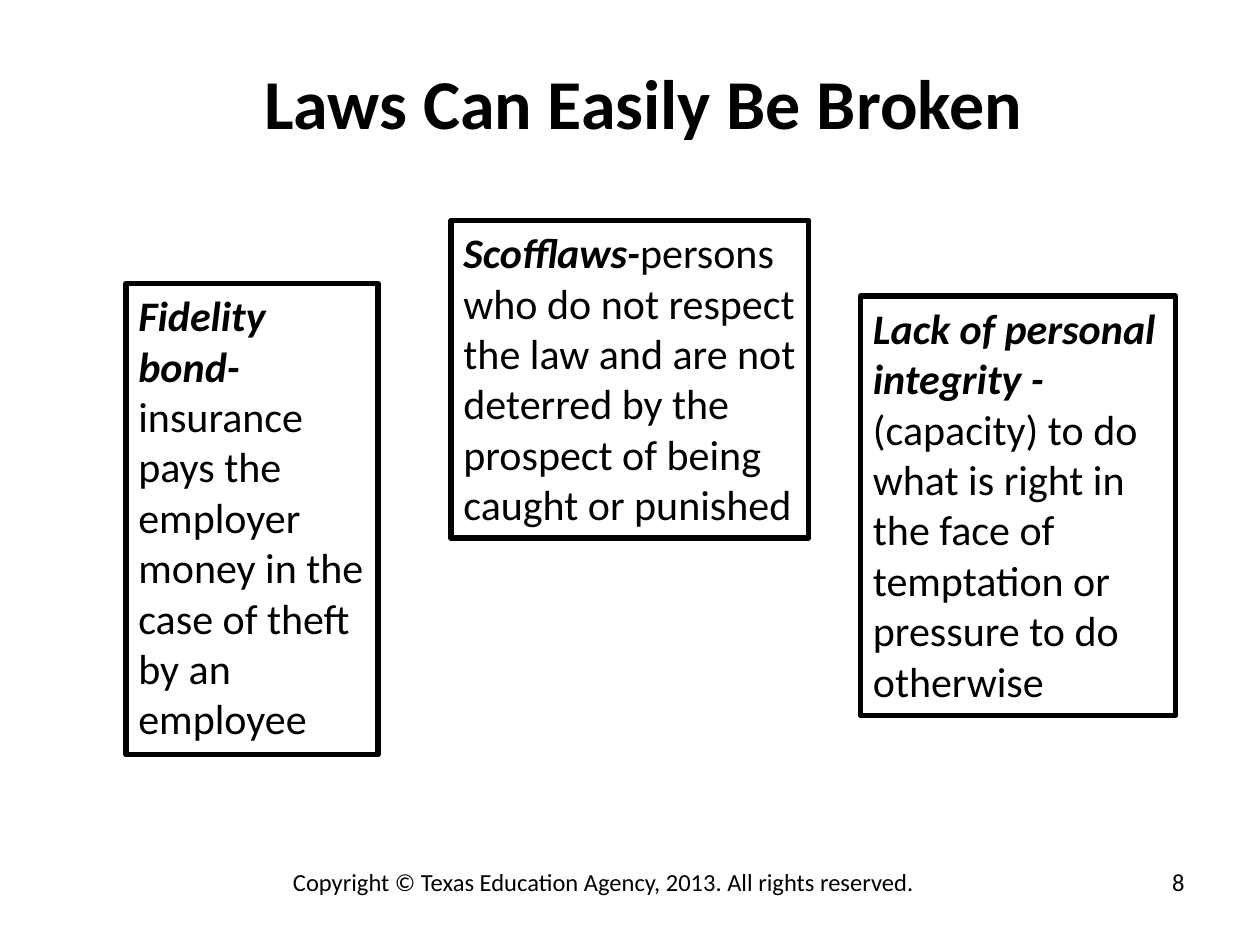
from dataclasses import dataclass

from pptx import Presentation
from pptx.dml.color import RGBColor
from pptx.enum.shapes import MSO_SHAPE
from pptx.enum.text import MSO_ANCHOR, PP_ALIGN
from pptx.slide import Slide
from pptx.text.text import TextFrame
from pptx.util import Inches, Pt

BLACK = RGBColor(0x00, 0x00, 0x00)
FONT = "Calibri"
RIGHT_INSET = Inches(0.08)  # keeps the longest definition lines whole


@dataclass(frozen=True)
class Label:
    text: str
    left: float
    top: float
    width: float
    height: float
    size: int
    align: PP_ALIGN = PP_ALIGN.LEFT
    bold: bool = False


@dataclass(frozen=True)
class TermBox:
    term: str
    definition: str
    left: float
    top: float
    width: float
    height: float


LABELS = [
    Label("Laws Can Easily Be Broken", 2, 0.42, 8, 0.77, 40, bold=True),
    Label("8", 7.17, 6.83, 2.33, 0.52, 14, PP_ALIGN.RIGHT),
    Label("Copyright © Texas Education Agency, 2013. All rights reserved.",
          1.83, 6.83, 5.92, 0.52, 14, PP_ALIGN.CENTER),
]

TERM_BOXES = [
    TermBox("Fidelity bond- ",
            "insurance pays the employer money in the case of theft by an employee",
            1, 2.25, 2, 3.74),
    TermBox("Scofflaws-",
            "persons who do not respect the law and are not deterred by the "
            "prospect of being caught or punished",
            3.58, 1.75, 2.84, 2.52),
    TermBox("Lack of personal integrity -",
            "(capacity) to do what is right in the face of temptation or "
            "pressure to do otherwise",
            6.83, 2.35, 2.5, 3.33),
]


def style_text(frame: TextFrame, size: int, align: PP_ALIGN) -> None:
    frame.word_wrap = True
    frame.vertical_anchor = MSO_ANCHOR.TOP
    para = frame.paragraphs[0]
    para.alignment = align
    para.font.name = FONT
    para.font.size = Pt(size)
    para.font.color.rgb = BLACK


def add_label(page: Slide, label: Label) -> None:
    box = page.shapes.add_textbox(Inches(label.left), Inches(label.top),
                                  Inches(label.width), Inches(label.height))
    box.text_frame.text = label.text
    style_text(box.text_frame, label.size, label.align)
    box.text_frame.paragraphs[0].font.bold = label.bold


def add_term_box(page: Slide, item: TermBox) -> None:
    box = page.shapes.add_shape(MSO_SHAPE.RECTANGLE,
                                Inches(item.left), Inches(item.top),
                                Inches(item.width), Inches(item.height))
    box.shadow.inherit = False
    box.fill.background()
    box.line.color.rgb = BLACK
    box.line.width = Pt(3)
    style_text(box.text_frame, 24, PP_ALIGN.LEFT)
    box.text_frame.margin_right = RIGHT_INSET
    para = box.text_frame.paragraphs[0]
    term = para.add_run()
    term.text = item.term
    term.font.bold = True
    term.font.italic = True
    para.add_run().text = item.definition


def main() -> None:
    deck = Presentation()
    deck.slide_width = Inches(10)
    deck.slide_height = Inches(7.5)
    page = deck.slides.add_slide(deck.slide_layouts[6])

    # Title, then the three terms, then the footer
    title, *footer = LABELS
    add_label(page, title)
    for item in TERM_BOXES:
        add_term_box(page, item)
    for label in footer:
        add_label(page, label)

    deck.save("out.pptx")


if __name__ == "__main__":
    main()
